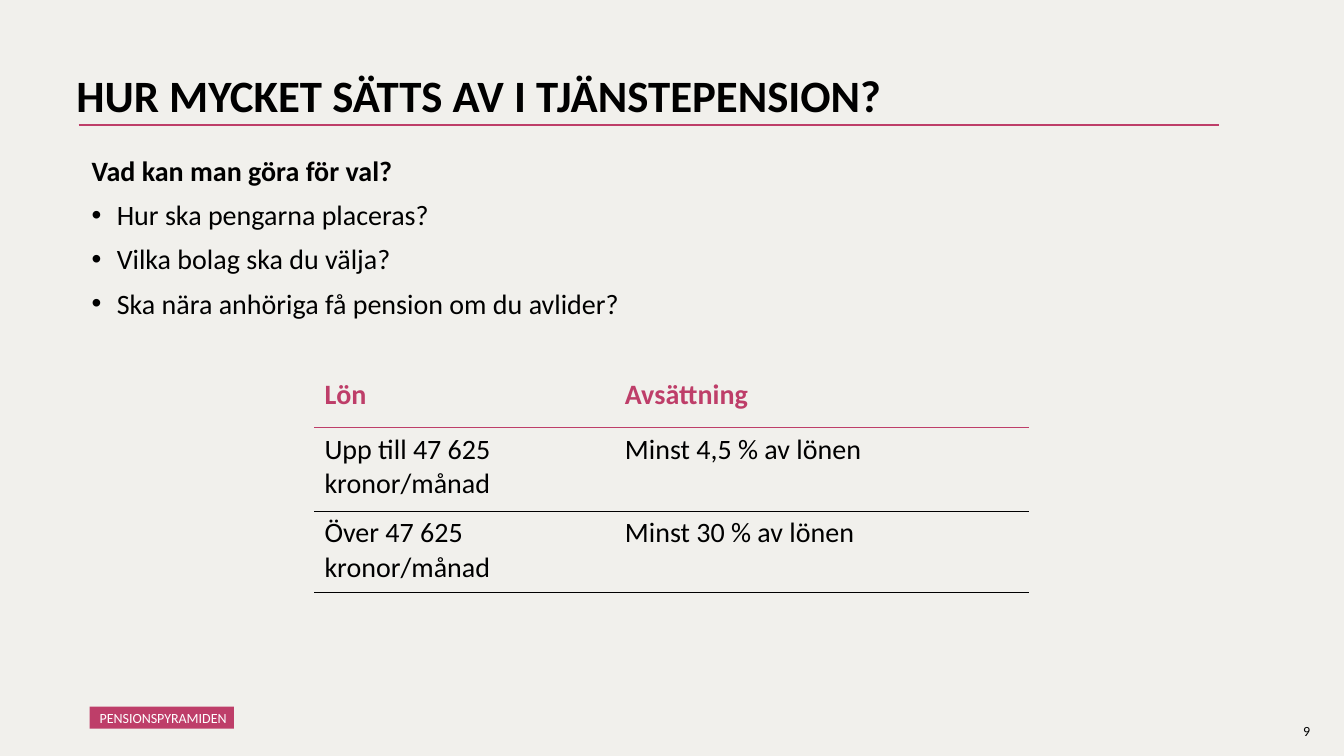
"""Build the slide on how much is paid into an occupational pension."""
import pptx
import pptx.dml.color
import pptx.enum.shapes
import pptx.enum.text
import pptx.oxml
import pptx.oxml.ns
import pptx.util
import lxml.etree

Pt = pptx.util.Pt
RGBColor = pptx.dml.color.RGBColor
PAPER = RGBColor(0xF1, 0xF0, 0xEC)
PINK = RGBColor(0xBE, 0x3E, 0x69)
BLACK = RGBColor(0, 0, 0)
WHITE = RGBColor(0xFF, 0xFF, 0xFF)
NO_GRID_STYLE = "{2D5ABB26-0587-4C30-8999-92F81FD0307C}"
qn = pptx.oxml.ns.qn


def add_text(para, text, size, color=BLACK, bold=False):
    span = para.add_run()
    span.text = text
    span.font.name = "Calibri"
    span.font.size = Pt(size)
    span.font.bold = bold
    span.font.color.rgb = color


def add_box(left, top, width, height):
    box = page.shapes.add_textbox(Pt(left), Pt(top), Pt(width), Pt(height))
    box.text_frame.word_wrap = True
    return box.text_frame


deck = pptx.Presentation()
deck.slide_width, deck.slide_height = Pt(960), Pt(540)
page = deck.slides.add_slide(deck.slide_layouts[6])
page.background.fill.solid()
page.background.fill.fore_color.rgb = PAPER

number = add_box(923.8, 512.6, 28.8, 19.4)
add_text(number.paragraphs[0], "9", 10)

rule = page.shapes.add_connector(
    pptx.enum.shapes.MSO_CONNECTOR.STRAIGHT, Pt(56.2), Pt(89.3), Pt(870.5), Pt(89.3))
rule.line.color.rgb = PINK
rule.line.width = Pt(1.5)
lxml.etree.SubElement(rule._element.spPr, qn("a:effectLst"))

title = add_box(47.5, 49, 828, 104.4)
title.paragraphs[0].line_spacing = 0.9
add_text(title.paragraphs[0], "HUR MYCKET SÄTTS AV I TJÄNSTEPENSION?", 32, bold=True)

rows = [
    ("Lön", "Avsättning"),
    ("Upp till 47 625 kronor/månad", "Minst 4,5 % av lönen"),
    ("Över 47 625 kronor/månad", "Minst 30 % av lönen"),
]
table = page.shapes.add_table(
    3, 2, Pt(224.6), Pt(266.4), Pt(510.5), Pt(157)).table
table.first_row = True
table.horz_banding = False
table._tbl.tblPr.find(qn("a:tableStyleId")).text = NO_GRID_STYLE
for column, width in zip(table.columns, (214.6, 295.9)):
    column.width = Pt(width)
for row_index, (texts, height) in enumerate(zip(rows, (38.9, 59.8, 58.3))):
    header = row_index == 0
    table.rows[row_index].height = Pt(height)
    for column_index, text in enumerate(texts):
        cell = table.cell(row_index, column_index)
        add_text(cell.text_frame.paragraphs[0], text, 20, PINK if header else BLACK, header)
        border = lxml.etree.SubElement(
            cell._tc.get_or_add_tcPr(), qn("a:lnB"), w=str(Pt(1 if header else 0.5)))
        paint = lxml.etree.SubElement(border, qn("a:solidFill"))
        lxml.etree.SubElement(paint, qn("a:srgbClr"), val=str(PINK if header else BLACK))
        cell.fill.background()

tag = page.shapes.add_shape(
    pptx.enum.shapes.MSO_SHAPE.RECTANGLE, Pt(64.1), Pt(504.7), Pt(103), Pt(15.8))
tag.shadow.inherit = False
tag.fill.solid()
tag.fill.fore_color.rgb = PINK
tag.line.fill.background()
label = tag.text_frame
label.word_wrap = False
label.vertical_anchor = pptx.enum.text.MSO_ANCHOR.MIDDLE
label.margin_left, label.margin_top = Pt(7.2), Pt(5.8)
label.margin_right, label.margin_bottom = Pt(2.9), Pt(3.6)
label.paragraphs[0].alignment = pptx.enum.text.PP_ALIGN.LEFT
label.paragraphs[0].line_spacing = 0.9
add_text(label.paragraphs[0], "PENSIONSPYRAMIDEN", 10, WHITE)

choices = add_box(58.3, 108.7, 608.4, 130.3)
heading = choices.paragraphs[0]
heading.line_spacing = 0.9
add_text(heading, "Vad kan man göra för val?", 20, bold=True)
for question in (
    "Hur ska pengarna placeras?",
    "Vilka bolag ska du välja?",
    "Ska nära anhöriga få pension om du avlider?",
):
    para = choices.add_paragraph()
    para.line_spacing = 0.9
    para.space_before = Pt(10)
    properties = para._p.get_or_add_pPr()
    properties.set("marL", str(Pt(18)))
    properties.set("indent", str(-Pt(18)))
    lxml.etree.SubElement(properties, qn("a:buFont"), typeface="Arial")
    lxml.etree.SubElement(properties, qn("a:buChar"), char="•")
    add_text(para, question, 20)

deck.save("out.pptx")
